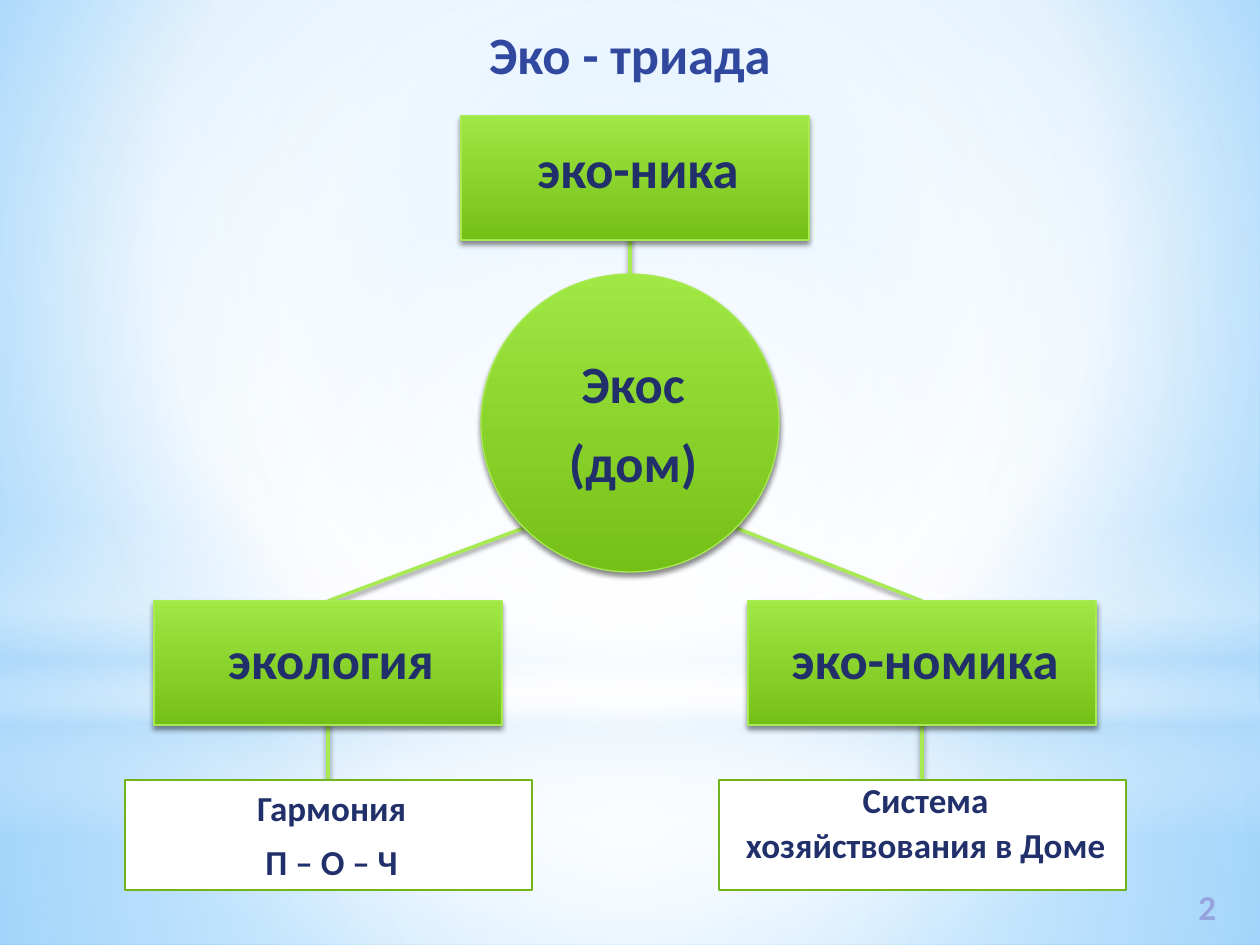
import pptx
import pptx.dml.color
import pptx.enum.shapes
import pptx.enum.text
import pptx.oxml
import pptx.oxml.ns
import pptx.util
from lxml import etree

PX_PER_INCH = 126
WIDTH, HEIGHT = 1260, 945
RECTANGLE = pptx.enum.shapes.MSO_SHAPE.RECTANGLE
OVAL = pptx.enum.shapes.MSO_SHAPE.OVAL
CENTER = pptx.enum.text.PP_ALIGN.CENTER
LEFT = pptx.enum.text.PP_ALIGN.LEFT
NAMESPACE = 'xmlns:a="http://schemas.openxmlformats.org/drawingml/2006/main"'


class Theme:
    font = "Calibri"
    title, ink, number = "31489F", "21306A", "95A4DE"
    link, frame, white = "A7EA52", "72B41D", "FFFFFF"
    large, small = 30, 20
    middle = (50, 50, 50, 50)
    # Gradient stops: position %, colour, opacity %
    node = [(0, "A0E844", 100), (100, "75C016", 100)]
    backdrop = [(0, "9ED5FF", 100), (60, "FFFFFF", 100), (100, "5BB9FF", 100)]
    floor = [(0, "FFFFFF", 91), (37, "FFFFFF", 76), (100, "B4DCFA", 79)]
    sky = [(0, "FFFFFF", 89), (48, "FFFFFF", 62), (100, "B4DCFA", 79)]
    horizon = [(0, "FFFFFF", 0), (29, "FFFFFF", 30), (45, "B4DCFA", 40),
               (55, "FFFFFF", 26), (65, "B4DCFA", 60), (100, "FFFFFF", 0)]
    glow = [(0, "FFFFFF", 100), (56, "FFFFFF", 0)]


def px(length):
    return pptx.util.Inches(length / PX_PER_INCH)


def rgb(code):
    return pptx.dml.color.RGBColor.from_string(code)


def apply_gradient(parent, stops, focus=None):
    """Swap the solid fill of parent for a vertical or, with a focus, circular gradient."""
    stop_xml = "".join(
        f'<a:gs pos="{position * 1000}"><a:srgbClr val="{color}">'
        f'<a:alpha val="{opacity * 1000}"/></a:srgbClr></a:gs>'
        for position, color, opacity in stops)
    if focus:
        sides = " ".join(f'{side}="{value * 1000}"' for side, value in zip("ltrb", focus))
        direction = f'<a:path path="circle"><a:fillToRect {sides}/></a:path>'
    else:
        direction = '<a:lin ang="5400000" scaled="0"/>'
    gradient = pptx.oxml.parse_xml(
        f'<a:gradFill {NAMESPACE} rotWithShape="1"><a:gsLst>{stop_xml}</a:gsLst>'
        f'{direction}</a:gradFill>')
    parent.replace(parent.find(pptx.oxml.ns.qn("a:solidFill")), gradient)


def set_shadow(shape):
    """Cast a soft shadow straight down; call after fill and line are set."""
    effects = etree.SubElement(shape.element.spPr, pptx.oxml.ns.qn("a:effectLst"))
    effects.append(pptx.oxml.parse_xml(
        f'<a:outerShdw {NAMESPACE} blurRad="{pptx.util.Pt(3.1)}" '
        f'dist="{pptx.util.Pt(1.8)}" dir="5400000" rotWithShape="0">'
        '<a:srgbClr val="000000"><a:alpha val="45000"/></a:srgbClr></a:outerShdw>'))


class SlideBuilder:
    def __init__(self, page, theme):
        self.page, self.theme = page, theme

    def background(self, stops, focus):
        self.page.background.fill.solid()
        apply_gradient(self.page.element.find(".//" + pptx.oxml.ns.qn("p:bgPr")), stops, focus)

    def shape(self, kind, area, line=None, weight=0.75):
        shape = self.page.shapes.add_shape(kind, *map(px, area))
        shape.fill.solid()
        shape.fill.fore_color.rgb = rgb(self.theme.white)
        if line:
            shape.line.color.rgb = rgb(line)
            shape.line.width = pptx.util.Pt(weight)
        else:
            shape.line.fill.background()
        return shape

    def light(self, kind, area, stops, focus=None):
        shape = self.shape(kind, area)
        shape.shadow.inherit = False
        apply_gradient(shape.element.spPr, stops, focus)

    def node(self, kind, area):
        shape = self.shape(kind, area, self.theme.link)
        apply_gradient(shape.element.spPr, self.theme.node)
        set_shadow(shape)

    def link(self, start, end):
        connector = self.page.shapes.add_connector(
            pptx.enum.shapes.MSO_CONNECTOR.STRAIGHT, *map(px, start + end))
        connector.line.color.rgb = rgb(self.theme.link)
        connector.line.width = pptx.util.Pt(2)
        set_shadow(connector)

    def fill_text(self, box, lines, size, color, align=CENTER, hanging=True, spacing=None):
        frame = box.text_frame
        frame.word_wrap = True
        frame.vertical_anchor = pptx.enum.text.MSO_ANCHOR.TOP
        for index, line in enumerate(lines):
            para = frame.add_paragraph() if index else frame.paragraphs[0]
            para.add_run().text = line
            para.alignment = align
            para.font.name, para.font.bold = self.theme.font, True
            para.font.size = pptx.util.Pt(size)
            para.font.color.rgb = rgb(color)
            if spacing:
                para.line_spacing = spacing
            if hanging:
                para.space_before = pptx.util.Pt(size * 0.2)
                para.space_after = pptx.util.Pt(3)
                properties = para._p.get_or_add_pPr()
                properties.set("marL", str(pptx.util.Inches(0.25)))
                properties.set("indent", str(pptx.util.Inches(-0.2)))

    def text(self, area, lines, size, color, **style):
        box = self.page.shapes.add_textbox(*map(px, area))
        self.fill_text(box, lines, size, color, **style)

    def label(self, area, *lines):
        self.text(area, lines, self.theme.large, self.theme.ink)

    def note(self, area, lines, spacing=None):
        shape = self.shape(RECTANGLE, area, self.theme.frame, 1.25)
        shape.shadow.inherit = False
        self.fill_text(shape, lines, self.theme.small, self.theme.ink, spacing=spacing)


def main():
    deck = pptx.Presentation()
    deck.slide_width, deck.slide_height = px(WIDTH), px(HEIGHT)
    theme = Theme()
    builder = SlideBuilder(deck.slides.add_slide(deck.slide_layouts[6]), theme)

    builder.background(theme.backdrop, (20, 10, 20, 60))
    builder.light(RECTANGLE, (0, 703, WIDTH, 242), theme.floor, theme.middle)
    builder.light(RECTANGLE, (0, 0, WIDTH, 703), theme.sky, theme.middle)
    builder.light(RECTANGLE, (0, 519, WIDTH, 315), theme.horizon)
    builder.light(OVAL, (0, 220, WIDTH, 703), theme.glow, theme.middle)

    node_width, node_height, node_top = 348, 124, 601
    note_width, note_height, note_top = 407, 110, 780
    branches = [
        (328, 524, "экология", ["Гармония", "П – О – Ч"], None),
        (922, 736, "эко-номика", ["Система", "хозяйствования в Доме"], 0.8),
    ]
    for center, circle_edge, *_ in branches:
        builder.link((center, 721), (center, note_top))
        builder.link((center, node_top), (circle_edge, 528))
    builder.link((630, 275), (630, 224))

    builder.text((0, 16, WIDTH, 189), ["Эко - триада"], theme.large, theme.title, hanging=False)
    builder.node(OVAL, (481, 274, 298, 298))
    builder.label((481, 345, 298, 149), "Экос", "(дом)")
    for center, _, name, lines, spacing in branches:
        left = center - node_width // 2
        builder.node(RECTANGLE, (left, node_top, node_width, node_height))
        builder.label((left, 621, node_width, 100), name)
        builder.note((center - note_width // 2, note_top, note_width, note_height), lines, spacing)
    builder.node(RECTANGLE, (461, 116, node_width, node_height))
    builder.label((461, 130, node_width, 149), "эко-ника")
    builder.text((1186, 879, 59, 55), ["2"], theme.small, theme.number, align=LEFT, hanging=False)

    deck.save("out.pptx")


if __name__ == "__main__":
    main()
